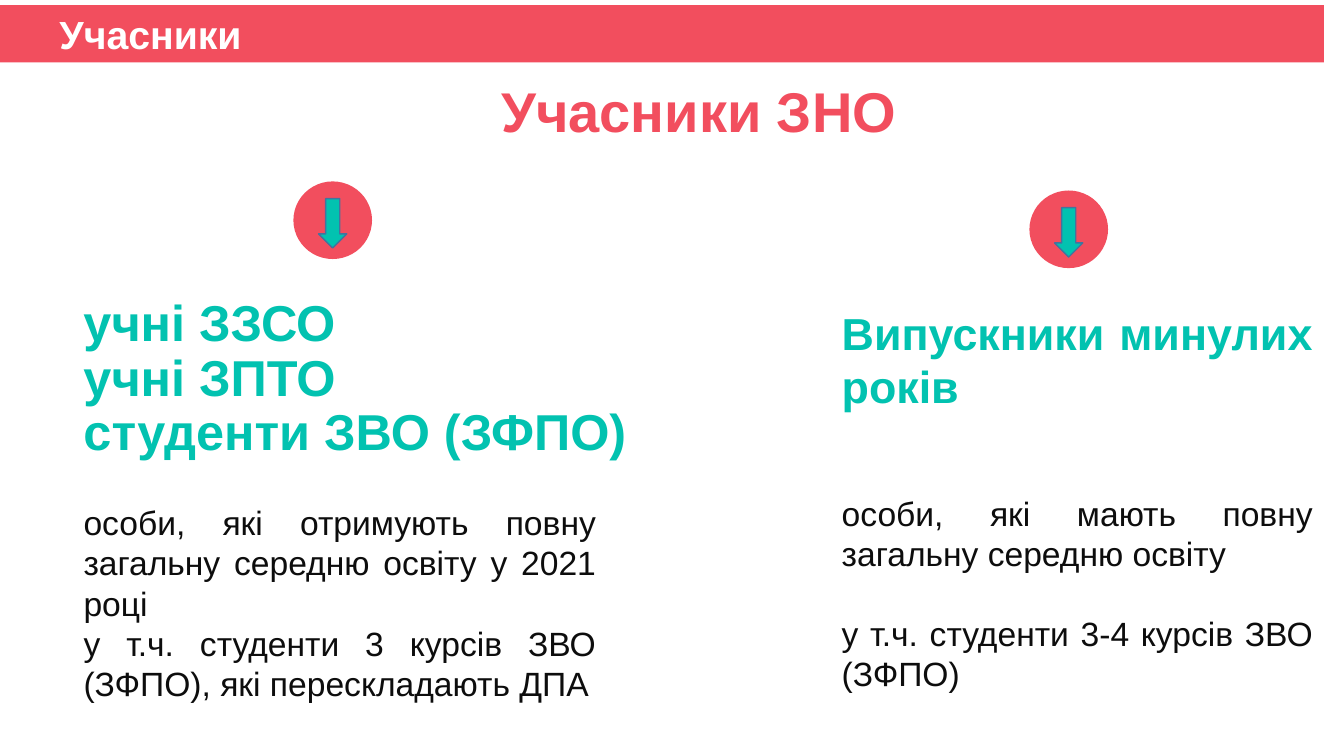
"""Build the slide about the participants of the external assessment."""
from pptx import Presentation
from pptx.dml.color import RGBColor
from pptx.enum.shapes import MSO_SHAPE
from pptx.enum.text import MSO_ANCHOR, PP_ALIGN
from pptx.util import Pt

PX = 9144
RED, TEAL, BLACK, WHITE, BLUE = "F24E5E", "02C2B0", "0D0D0D", "FFFFFF", "43739E"
LEFT, CENTER, JUSTIFY = PP_ALIGN.LEFT, PP_ALIGN.CENTER, PP_ALIGN.JUSTIFY

BANNER = (0, 5, 1313, 57)
BANNER_INDENT = 49
BANNER_TEXT = [("Учасники", 28, WHITE, True, 0)]

# box, alignment, line spacing, paragraphs of (text, size, colour, bold, space before)
TEXTS = [
    ((263, 79, 860, 84), CENTER, 0.9, [("Учасники ЗНО", 40, RED, True, 0)]),
    ((73, 291, 576, 235), LEFT, 0.9, [
        ("учні ЗЗСО", 36, TEAL, True, 0),
        ("учні ЗПТО", 36, TEAL, True, 0),
        ("студенти ЗВО (ЗФПО)", 36, TEAL, True, 0),
    ]),
    ((825, 298, 487, 401), JUSTIFY, None, [
        ("Випускники минулих років", 32, TEAL, True, 0),
        ("особи, які мають повну загальну середню освіту", 24, BLACK, False, 57),
        ("у т.ч. студенти 3-4 курсів ЗВО (ЗФПО)", 24, BLACK, False, 28),
    ]),
    ((73, 493, 528, 212), JUSTIFY, None, [
        ("особи, які отримують повну загальну середню освіту у 2021 році",
         24, BLACK, False, 0),
        ("у т.ч. студенти 3 курсів ЗВО (ЗФПО), які перескладають ДПА",
         24, BLACK, False, 0),
    ]),
]

BADGES = [(291, 180), (1021, 189)]
CIRCLE_SIZE = (78, 77)
ARROW_OFFSET = (25, 17)
ARROW_SIZE = (28, 49)


def rgb(color):
    return RGBColor.from_string(color)


def emu(box):
    return [n * PX for n in box]


def write(tf, paragraphs, align, spacing=None):
    tf.word_wrap = True
    for i, (text, size, color, bold, before) in enumerate(paragraphs):
        p = tf.add_paragraph() if i else tf.paragraphs[0]
        p.text = text
        p.alignment = align
        p.space_before = Pt(before)
        if spacing:
            p.line_spacing = spacing
        font = p.runs[0].font
        font.name, font.size, font.bold = "Arial", Pt(size), bold
        font.color.rgb = rgb(color)


def add_shape(shapes, kind, box, fill, line=None):
    sp = shapes.add_shape(kind, *emu(box))
    sp.shadow.inherit = False
    sp.fill.solid()
    sp.fill.fore_color.rgb = rgb(fill)
    if line:
        sp.line.color.rgb = rgb(line)
        sp.line.width = Pt(1)
    else:
        sp.line.fill.background()
    return sp


def add_badge(s, x, y):
    shapes = s.shapes.add_group_shape().shapes
    dx, dy = ARROW_OFFSET
    add_shape(shapes, MSO_SHAPE.OVAL, (x, y, *CIRCLE_SIZE), RED)
    add_shape(shapes, MSO_SHAPE.DOWN_ARROW, (x + dx, y + dy, *ARROW_SIZE), TEAL, BLUE)


def main():
    prs = Presentation()
    prs.slide_width, prs.slide_height = emu((1333, 750))
    s = prs.slides.add_slide(prs.slide_layouts[6])

    for box, align, spacing, paragraphs in TEXTS:
        tf = s.shapes.add_textbox(*emu(box)).text_frame
        write(tf, paragraphs, align, spacing)

    banner = add_shape(s.shapes, MSO_SHAPE.RECTANGLE, BANNER, RED)
    tf = banner.text_frame
    tf.vertical_anchor = MSO_ANCHOR.MIDDLE
    tf.margin_left += BANNER_INDENT * PX
    write(tf, BANNER_TEXT, LEFT)

    for x, y in BADGES:
        add_badge(s, x, y)

    prs.save("out.pptx")


if __name__ == "__main__":
    main()
